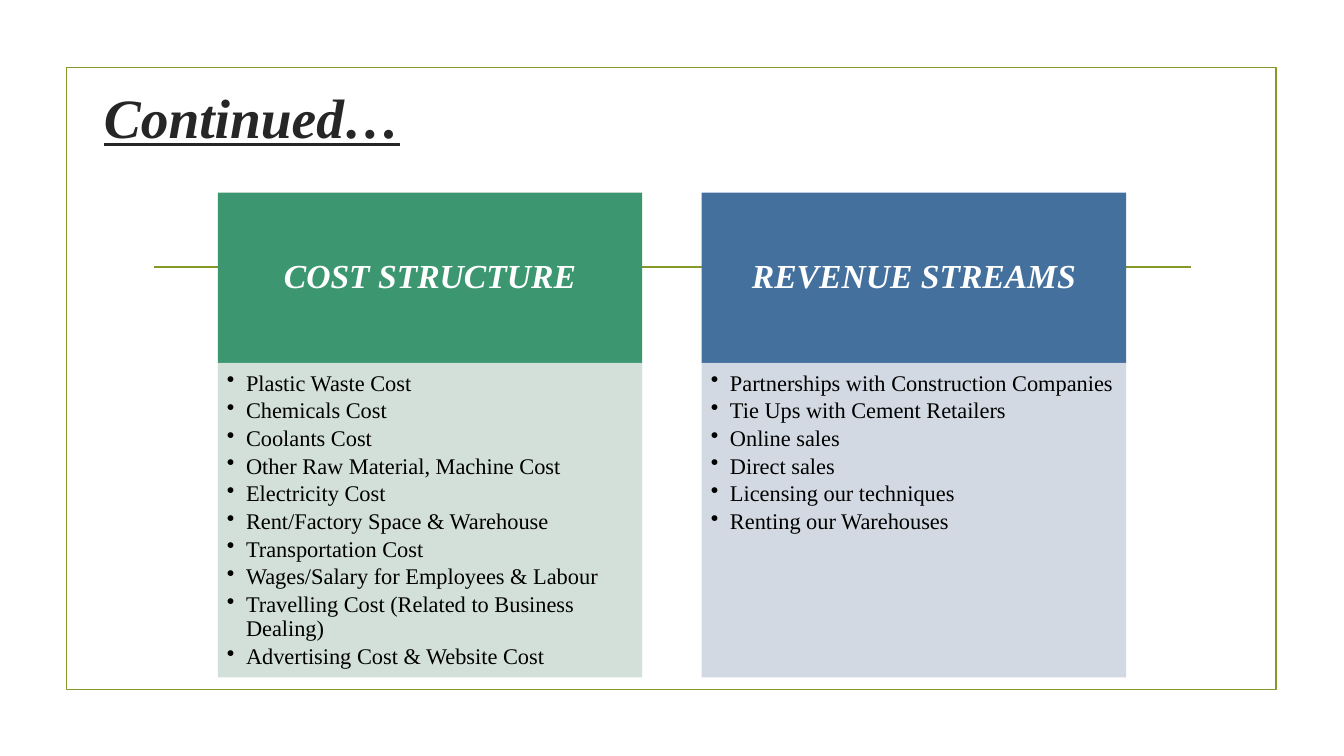
from typing import Any, NamedTuple

from lxml.etree import SubElement
from pptx import Presentation
from pptx.dml.color import RGBColor
from pptx.enum.shapes import MSO_CONNECTOR, MSO_SHAPE
from pptx.enum.text import MSO_ANCHOR, MSO_AUTO_SIZE, PP_ALIGN
from pptx.oxml.ns import qn
from pptx.util import Inches, Pt

FACE = "Times New Roman"
OLIVE = "83992A"
TOP, WIDTH, HEAD, BODY = 1.91, 4.21, 1.69, 3.12
LEFT, STEP = 2.16, 4.8


class Panel(NamedTuple):
    title: str
    dark: str
    pale: str
    items: tuple[str, ...]


PANELS = (
    Panel("COST STRUCTURE", "3C9770", "CEDDD5", (
        "Plastic Waste Cost",
        "Chemicals Cost",
        "Coolants Cost",
        "Other Raw Material, Machine Cost",
        "Electricity Cost",
        "Rent/Factory Space & Warehouse",
        "Transportation Cost",
        "Wages/Salary for Employees & Labour",
        "Travelling Cost (Related to Business Dealing)",
        "Advertising Cost & Website Cost",
    )),
    Panel("REVENUE STREAMS", "44709D", "CFD5DF", (
        "Partnerships with Construction Companies",
        "Tie Ups with Cement Retailers",
        "Online sales",
        "Direct sales",
        "Licensing our techniques",
        "Renting our Warehouses",
    )),
)


def apply(target: Any, values: dict[str, Any]) -> None:
    for name, value in values.items():
        setattr(target, name, value)


def tint(color: Any, value: str) -> None:
    color.rgb = RGBColor.from_string(value)


def write(para: Any, text: str, size: float, color: str, **style: bool) -> None:
    run = para.add_run()
    run.text = text
    apply(run.font, {"name": FACE, "size": Pt(size), **style})
    tint(run.font.color, color)


def block(slide: Any, left: float, top: float, width: float, height: float) -> Any:
    shape = slide.shapes.add_shape(
        MSO_SHAPE.RECTANGLE, Inches(left), Inches(top), Inches(width), Inches(height))
    shape.shadow.inherit = False
    shape.fill.background()
    shape.line.fill.background()
    return shape


def paint(shape: Any, color: str) -> None:
    shape.fill.solid()
    tint(shape.fill.fore_color, color)


def edge(shape: Any) -> None:
    tint(shape.line.color, OLIVE)
    shape.line.width = Pt(1.25)


def inset(frame: Any, left: float, top: float, right: float, bottom: float) -> None:
    apply(frame, {
        "word_wrap": True,
        "margin_left": Inches(left), "margin_top": Inches(top),
        "margin_right": Inches(right), "margin_bottom": Inches(bottom)})


def bullet(para: Any) -> None:
    props = para._p.get_or_add_pPr()
    props.set("marL", str(Inches(0.19)))
    props.set("indent", str(-Inches(0.19)))
    SubElement(props, qn("a:buChar")).set("char", "•")


def draw_panel(slide: Any, panel: Panel, left: float) -> None:
    head = block(slide, left, TOP, WIDTH, HEAD)
    paint(head, panel.dark)
    frame = head.text_frame
    inset(frame, 0.19, 0.11, 0.19, 0.11)
    frame.vertical_anchor = MSO_ANCHOR.MIDDLE
    para = frame.paragraphs[0]
    apply(para, {"alignment": PP_ALIGN.CENTER, "line_spacing": 0.9})
    write(para, panel.title, 24, "FFFFFF", bold=True, italic=True)

    body = block(slide, left, TOP + HEAD, WIDTH, BODY)
    paint(body, panel.pale)
    color = body.fill._xPr.find(".//" + qn("a:srgbClr"))
    SubElement(color, qn("a:alpha")).set("val", "90000")
    frame = body.text_frame
    inset(frame, 0.09, 0.09, 0.12, 0.14)
    frame.vertical_anchor = MSO_ANCHOR.TOP
    for rank, item in enumerate(panel.items):
        para = frame.add_paragraph() if rank else frame.paragraphs[0]
        bullet(para)
        apply(para, {"level": 1, "alignment": PP_ALIGN.LEFT,
                     "line_spacing": 0.9, "space_after": Pt(2.5)})
        write(para, item, 16, "000000")


def draw_title(slide: Any) -> None:
    title = slide.shapes.title
    apply(title, {"left": Inches(0.93), "top": Inches(0.91),
                  "width": Inches(10.5), "height": Inches(0.49)})
    frame = title.text_frame
    apply(frame, {"auto_size": MSO_AUTO_SIZE.NONE, "word_wrap": True,
                  "vertical_anchor": MSO_ANCHOR.MIDDLE})
    para = frame.paragraphs[0]
    para.alignment = PP_ALIGN.LEFT
    write(para, "Continued…", 39.6, "262626", bold=True, italic=True, underline=True)


def draw_rule(slide: Any) -> None:
    rule = slide.shapes.add_connector(
        MSO_CONNECTOR.STRAIGHT, Inches(1.53), Inches(2.65), Inches(11.81), Inches(2.65))
    edge(rule)
    SubElement(rule._element.spPr, qn("a:effectLst"))


def main() -> None:
    deck = Presentation()
    apply(deck, {"slide_width": Inches(13.33), "slide_height": Inches(7.5)})
    slide = deck.slides.add_slide(deck.slide_layouts[5])
    edge(block(slide, 0.66, 0.67, 12, 6.17))
    draw_rule(slide)
    draw_title(slide)
    for rank, panel in enumerate(PANELS):
        draw_panel(slide, panel, LEFT + rank * STEP)
    deck.save("out.pptx")


if __name__ == "__main__":
    main()
